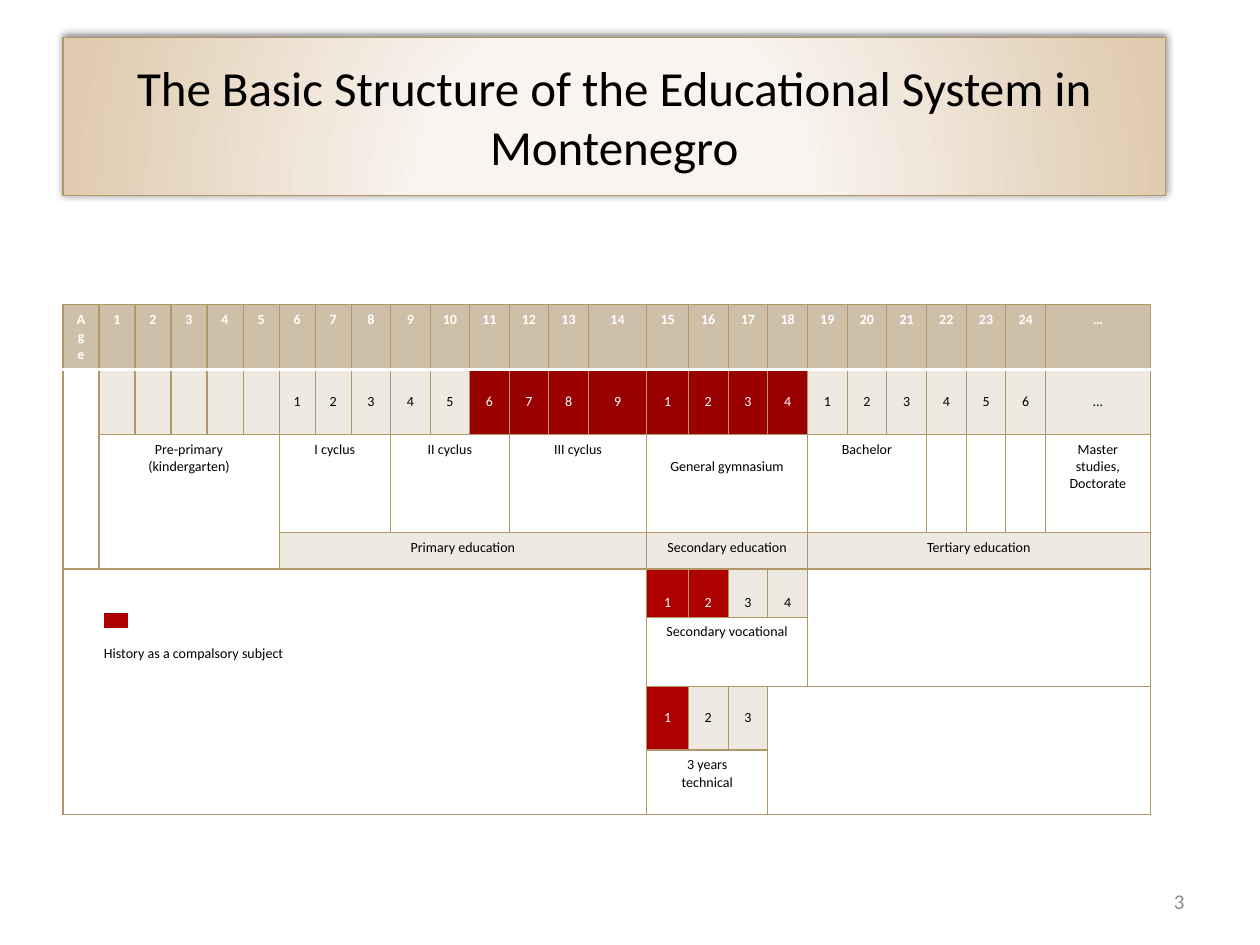
from lxml import etree
from pptx import Presentation
from pptx import util as u
from pptx.dml import color as dml
from pptx.enum import shapes, text
from pptx.oxml import parse_xml
from pptx.oxml.ns import qn

NS = 'xmlns:a="http://schemas.openxmlformats.org/drawingml/2006/main"'
FONT = "Calibri"
BLACK, WHITE, GREY = "000000", "FFFFFF", "8C8C8C"
BORDER, HEADER, TINT = "B29768", "CDBFA8", "EEEAE2"
HISTORY, HISTORY_VOCATIONAL = "990000", "AD0101"
TOP, MIDDLE, BOTTOM = text.MSO_ANCHOR.TOP, text.MSO_ANCHOR.MIDDLE, text.MSO_ANCHOR.BOTTOM
LEFT, CENTER, RIGHT = text.PP_ALIGN.LEFT, text.PP_ALIGN.CENTER, text.PP_ALIGN.RIGHT

COLUMNS = [20.6] * 8 + [22.6] * 7 + [23.8] + [22.7] * 9 + [59.8]
ROWS = [37, 37, 56, 21, 27.5, 39.5, 36.5, 37]
AGES = ["Age", *map(str, range(1, 25)), "…"]
GRADES = [""] * 6 + [str(n) for last in (9, 4, 6) for n in range(1, last + 1)] + ["..."]

# row, column, rows spanned, columns spanned, lines, fill, extra formatting
BLOCKS = [
    (1, 0, 3, 1, [], WHITE, {}),
    (2, 1, 2, 5, ["Pre-primary", "(kindergarten)"], WHITE, {}),
    (2, 6, 1, 3, ["I cyclus"], WHITE, {}),
    (2, 9, 1, 3, ["II cyclus"], WHITE, {}),
    (2, 12, 1, 3, ["III cyclus"], WHITE, {}),
    (2, 15, 1, 4, ["General gymnasium"], WHITE, {"top": 13.4}),
    (2, 19, 1, 3, ["Bachelor"], WHITE, {}),
    (2, 22, 1, 1, [], WHITE, {}),
    (2, 23, 1, 1, [], WHITE, {}),
    (2, 24, 1, 1, [], WHITE, {}),
    (2, 25, 1, 1, ["Master studies,", "Doctorate"], WHITE, {}),
    (3, 6, 1, 9, ["Primary education"], TINT, {}),
    (3, 15, 1, 4, ["Secondary education"], TINT, {}),
    (3, 19, 1, 7, ["Tertiary education"], TINT, {}),
    (4, 0, 4, 15, ["History as a compalsory subject"], WHITE,
     {"top": 43.7, "left": 23.4, "align": LEFT}),
    (4, 19, 2, 7, [], WHITE, {}),
    (5, 15, 1, 4, ["Secondary vocational"], WHITE, {}),
    (6, 18, 2, 8, [], WHITE, {}),
    (7, 15, 1, 3, ["3 years", "technical"], WHITE, {}),
]


def rgb(code):
    """Turn a hex string into a colour."""
    return dml.RGBColor.from_string(code)


def add_run(paragraph, words, size, colour, bold=False):
    """Add one formatted run to a paragraph."""
    run = paragraph.add_run()
    run.text = words
    run.font.name, run.font.size, run.font.bold = FONT, u.Pt(size), bold
    run.font.color.rgb = rgb(colour)


def fill_solid(item, colour):
    """Fill a cell or shape, letting the tint show at 40 percent."""
    item.fill.solid()
    item.fill.fore_color.rgb = rgb(colour)
    if colour == TINT:
        swatch = item._tc.tcPr.find(".//" + qn("a:srgbClr"))
        etree.SubElement(swatch, qn("a:alpha"), val="40000")


def border_cell(cell, row):
    """Draw the four cell borders, with a white rule under the header."""
    properties = cell._tc.get_or_add_tcPr()
    for position, side in enumerate(("lnL", "lnR", "lnT", "lnB")):
        under_header = (row, side) in ((0, "lnB"), (1, "lnT"))
        colour, width = (WHITE, 2) if under_header else (BORDER, 0.75)
        properties.insert(position, parse_xml(
            f'<a:{side} {NS} w="{u.Pt(width)}"><a:solidFill>'
            f'<a:srgbClr val="{colour}"/></a:solidFill></a:{side}>'))


def write_cell(cell, lines, fill, colour=BLACK, bold=False, anchor=TOP,
               align=CENTER, top=3.6, left=7.2, right=7.2):
    """Fill a cell and set its lines of text."""
    fill_solid(cell, fill)
    cell.vertical_anchor = anchor
    cell.margin_top, cell.margin_left, cell.margin_right = u.Pt(top), u.Pt(left), u.Pt(right)
    for index, line in enumerate(lines):
        frame = cell.text_frame
        paragraph = frame.add_paragraph() if index else frame.paragraphs[0]
        paragraph.alignment = align
        add_run(paragraph, line, 8, colour, bold)


def write_number(cell, label, fill, **style):
    """Set a grade or age in a narrow cell."""
    colour = BLACK if fill == TINT else WHITE
    write_cell(cell, [label] if label else [], fill, colour, left=5, right=5, **style)


def add_structure(slide):
    """Build the table of ages, grades and levels of education."""
    frame = slide.shapes.add_table(len(ROWS), len(COLUMNS), u.Pt(36), u.Pt(174.2),
                                   u.Pt(sum(COLUMNS)), u.Pt(sum(ROWS)))
    table = frame.table
    table.first_row = table.horz_banding = False
    for column, width in zip(table.columns, COLUMNS):
        column.width = u.Pt(width)
    for index, height in enumerate(ROWS):
        table.rows[index].height = u.Pt(height)
        for cell in table.rows[index].cells:
            border_cell(cell, index)
            end = etree.SubElement(cell.text_frame.paragraphs[0]._p, qn("a:endParaRPr"))
            end.set("sz", "800")

    write_cell(table.cell(0, 0), AGES[:1], HEADER, WHITE, True)
    for column in range(1, len(COLUMNS)):
        write_number(table.cell(0, column), AGES[column], HEADER, bold=True)
        fill = HISTORY if 11 <= column <= 18 else TINT
        write_number(table.cell(1, column), GRADES[column], fill, anchor=MIDDLE)
    for row, years, history_years, anchor in ((4, 4, 2, BOTTOM), (6, 3, 1, MIDDLE)):
        for year in range(1, years + 1):
            fill = HISTORY_VOCATIONAL if year <= history_years else TINT
            write_number(table.cell(row, 14 + year), str(year), fill, anchor=anchor)
    for row, column, height, width, lines, fill, extra in BLOCKS:
        level = table.cell(row, column)
        if height * width > 1:
            level.merge(table.cell(row + height - 1, column + width - 1))
        write_cell(level, lines, fill, **extra)


def add_heading(slide):
    """Format the title with its gradient, outline and shadow."""
    heading = slide.shapes.title
    heading.left, heading.top = u.Pt(36), u.Pt(21.6)
    heading.width, heading.height = u.Pt(630), u.Pt(90)
    heading.text_frame.vertical_anchor = MIDDLE
    heading.text_frame.word_wrap = True
    paragraph = heading.text_frame.paragraphs[0]
    paragraph.alignment = CENTER
    add_run(paragraph, "The Basic Structure of the Educational System in Montenegro", 28, BLACK)
    heading.line.color.rgb = rgb(BORDER)
    heading.line.width = u.Pt(0.75)
    stops = "".join(f'<a:gs pos="{place * 1000}"><a:srgbClr val="{colour}"/></a:gs>'
                    for place, colour in ((0, "FBF7F2"), (34, "F9F4EF"), (100, "DECAAE")))
    gradient = parse_xml(
        f'<a:gradFill {NS} rotWithShape="1"><a:gsLst>{stops}</a:gsLst><a:path path="circle">'
        '<a:fillToRect l="50000" t="155000" r="50000" b="-55000"/></a:path></a:gradFill>')
    shadow = parse_xml(
        f'<a:effectLst {NS}><a:outerShdw blurRad="{u.Pt(5)}" dist="{u.Pt(2)}" '
        f'dir="{245 * 60000}" rotWithShape="0"><a:srgbClr val="{BLACK}">'
        '<a:alpha val="50000"/></a:srgbClr></a:outerShdw></a:effectLst>')
    outline = heading.line._ln
    outline.addprevious(gradient)
    outline.addnext(shadow)


def add_legend_key(slide):
    """Add the red key for history as a subject."""
    key = slide.shapes.add_shape(shapes.MSO_SHAPE.FLOWCHART_PROCESS,
                                 u.Pt(58.3), u.Pt(349.2), u.Pt(15.8), u.Pt(10.8))
    key.shadow.inherit = False
    fill_solid(key, HISTORY_VOCATIONAL)
    key.line.color.rgb = rgb(WHITE)
    key.line.width = u.Pt(2)


def add_page_number(slide):
    """Add the page number at the lower right."""
    page = slide.shapes.add_textbox(u.Pt(516), u.Pt(500.5), u.Pt(168), u.Pt(28.8))
    page.text_frame.word_wrap = True
    page.text_frame.vertical_anchor = MIDDLE
    paragraph = page.text_frame.paragraphs[0]
    paragraph.alignment = RIGHT
    add_run(paragraph, "3", 12, GREY)


def main():
    """Build and save the slide."""
    deck = Presentation()
    deck.slide_width, deck.slide_height = u.Pt(720), u.Pt(540)
    slide = deck.slides.add_slide(deck.slide_layouts[5])
    add_structure(slide)
    add_heading(slide)
    add_page_number(slide)
    add_legend_key(slide)
    deck.save("out.pptx")


if __name__ == "__main__":
    main()
